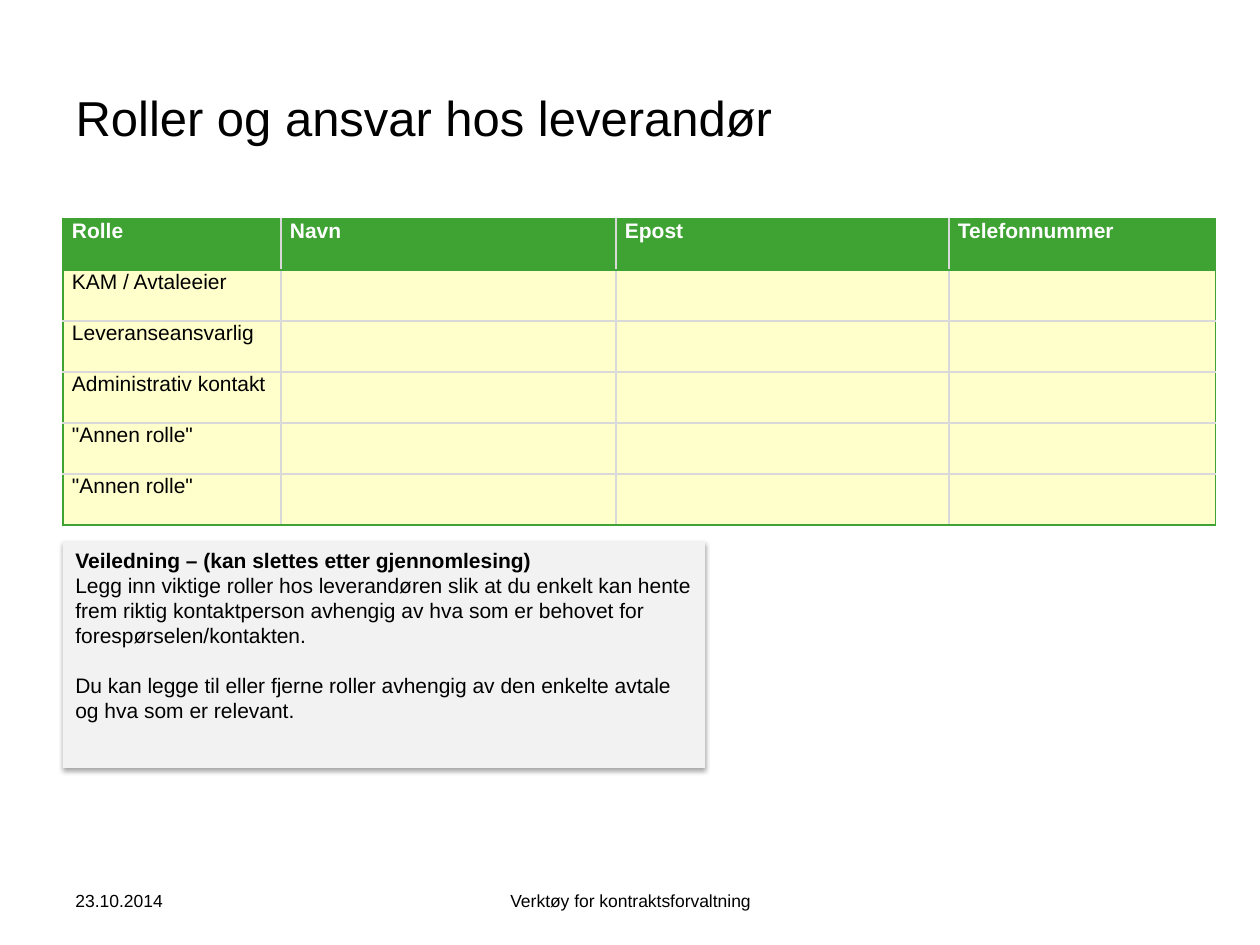
from dataclasses import dataclass

from lxml.etree import SubElement
from pptx import Presentation
from pptx.dml.color import RGBColor
from pptx.enum.shapes import MSO_SHAPE
from pptx.enum.text import MSO_ANCHOR as Anchor, PP_ALIGN as Align
from pptx.oxml.ns import qn
from pptx.util import Inches, Pt

PX_PER_INCH = 126


def px(length):
    return round(length * Inches(1) / PX_PER_INCH)


@dataclass(frozen=True)
class Theme:
    font: str = "Arial"
    ink: str = "000000"
    paper: str = "FFFFFF"
    green: str = "3EA333"
    cream: str = "FFFFCC"
    panel: str = "F2F2F2"
    rule: str = "D9D9D9"
    title: int = 28
    body: int = 12
    footer: int = 10


class SlideBuilder:
    def __init__(self, slide, theme):
        self.slide = slide
        self.theme = theme

    def add_text(self, paragraph, text, size, color=None, bold=False):
        run = paragraph.add_run()
        run.text = text
        run.font.name = self.theme.font
        run.font.size = Pt(size)
        run.font.bold = bold
        run.font.color.rgb = RGBColor.from_string(color or self.theme.ink)

    def paint(self, target, color):
        target.fill.solid()
        target.fill.fore_color.rgb = RGBColor.from_string(color)

    def title(self, text, left, top, width, height):
        heading = self.slide.shapes.title
        heading.left, heading.top = px(left), px(top)
        heading.width, heading.height = px(width), px(height)
        heading.text_frame.vertical_anchor = Anchor.MIDDLE
        paragraph = heading.text_frame.paragraphs[0]
        paragraph.alignment = Align.LEFT
        self.add_text(paragraph, text, self.theme.title)

    def border(self, cell, side, color, points):
        line = SubElement(cell._tc.get_or_add_tcPr(), qn(f"a:ln{side}"), w=str(Pt(points)))
        fill = SubElement(line, qn("a:solidFill"))
        SubElement(fill, qn("a:srgbClr"), val=color)

    def table(self, headers, roles, left, top, widths, row_height):
        row_count, column_count = len(roles) + 1, len(headers)
        frame = self.slide.shapes.add_table(
            row_count, column_count, px(left), px(top),
            px(sum(widths)), px(row_height * row_count))
        table = frame.table
        table.first_row = table.horz_banding = False
        for column, width in zip(table.columns, widths):
            column.width = px(width)
        for row in table.rows:
            row.height = px(row_height)

        rows = [headers] + [[role] + [""] * (column_count - 1) for role in roles]
        for r, texts in enumerate(rows):
            for c, text in enumerate(texts):
                self.cell(table.cell(r, c), text, is_header=r == 0, green_sides={
                    "L": c == 0,
                    "R": c == column_count - 1,
                    "T": r <= 1,
                    "B": r in (0, row_count - 1),
                })

    def cell(self, cell, text, is_header, green_sides):
        theme = self.theme
        cell.margin_left = cell.margin_right = px(9)
        cell.margin_top = cell.margin_bottom = 0
        for side, is_green in green_sides.items():
            self.border(cell, side, *((theme.green, 0.75) if is_green else (theme.rule, 1)))
        self.paint(cell, theme.green if is_header else theme.cream)
        if text:
            self.add_text(cell.text_frame.paragraphs[0], text, theme.body,
                          theme.paper if is_header else theme.ink, bold=is_header)

    def guidance(self, heading, advice, left, top, width, height):
        """Shaded panel with a bold heading and paragraphs one line apart."""
        panel = self.slide.shapes.add_shape(
            MSO_SHAPE.RECTANGLE, px(left), px(top), px(width), px(height))
        self.paint(panel, self.theme.panel)
        panel.line.fill.background()
        self.soft_shadow(panel)
        frame = panel.text_frame
        frame.word_wrap = True
        frame.vertical_anchor = Anchor.TOP
        frame.paragraphs[0].alignment = Align.LEFT
        self.add_text(frame.paragraphs[0], heading, self.theme.body, bold=True)
        for index, text in enumerate(advice):
            paragraph = frame.add_paragraph()
            paragraph.alignment = Align.LEFT
            paragraph.space_before = Pt(14 if index else 0)
            self.add_text(paragraph, text, self.theme.body)

    def soft_shadow(self, shape):
        shape.shadow.inherit = False
        effects = shape._element.spPr.find(qn("a:effectLst"))
        shadow = SubElement(effects, qn("a:outerShdw"), blurRad=str(Pt(3.1)),
                            dist=str(Pt(1.8)), dir="5400000", rotWithShape="0")
        color = SubElement(shadow, qn("a:srgbClr"), val=self.theme.ink)
        SubElement(color, qn("a:alpha"), val="35000")

    def footer(self, text, left, width, align):
        box = self.slide.shapes.add_textbox(px(left), px(876), px(width), px(50))
        frame = box.text_frame
        frame.word_wrap = True
        frame.vertical_anchor = Anchor.MIDDLE
        frame.paragraphs[0].alignment = align
        self.add_text(frame.paragraphs[0], text, self.theme.footer)


def main():
    deck = Presentation()
    deck.slide_width, deck.slide_height = Inches(10), Inches(7.5)
    title_only = deck.slide_layouts[5]
    builder = SlideBuilder(deck.slides.add_slide(title_only), Theme())

    builder.title("Roller og ansvar hos leverandør", 63, 38, 1134, 157)
    builder.table(
        headers=["Rolle", "Navn", "Epost", "Telefonnummer"],
        roles=["KAM / Avtaleeier", "Leveranseansvarlig", "Administrativ kontakt",
               '"Annen rolle"', '"Annen rolle"'],
        left=63, top=219, widths=[218, 335, 333, 267], row_height=51)
    builder.guidance(
        "Veiledning – (kan slettes etter gjennomlesing)",
        ["Legg inn viktige roller hos leverandøren slik at du enkelt kan hente frem "
         "riktig kontaktperson avhengig av hva som er behovet for "
         "forespørselen/kontakten.",
         "Du kan legge til eller fjerne roller avhengig av den enkelte avtale og hva "
         "som er relevant."],
        63, 541, 642, 227)
    builder.footer("23.10.2014", 63, 294, Align.LEFT)
    builder.footer("Verktøy for kontraktsforvaltning", 431, 399, Align.CENTER)

    deck.save("out.pptx")


if __name__ == "__main__":
    main()
